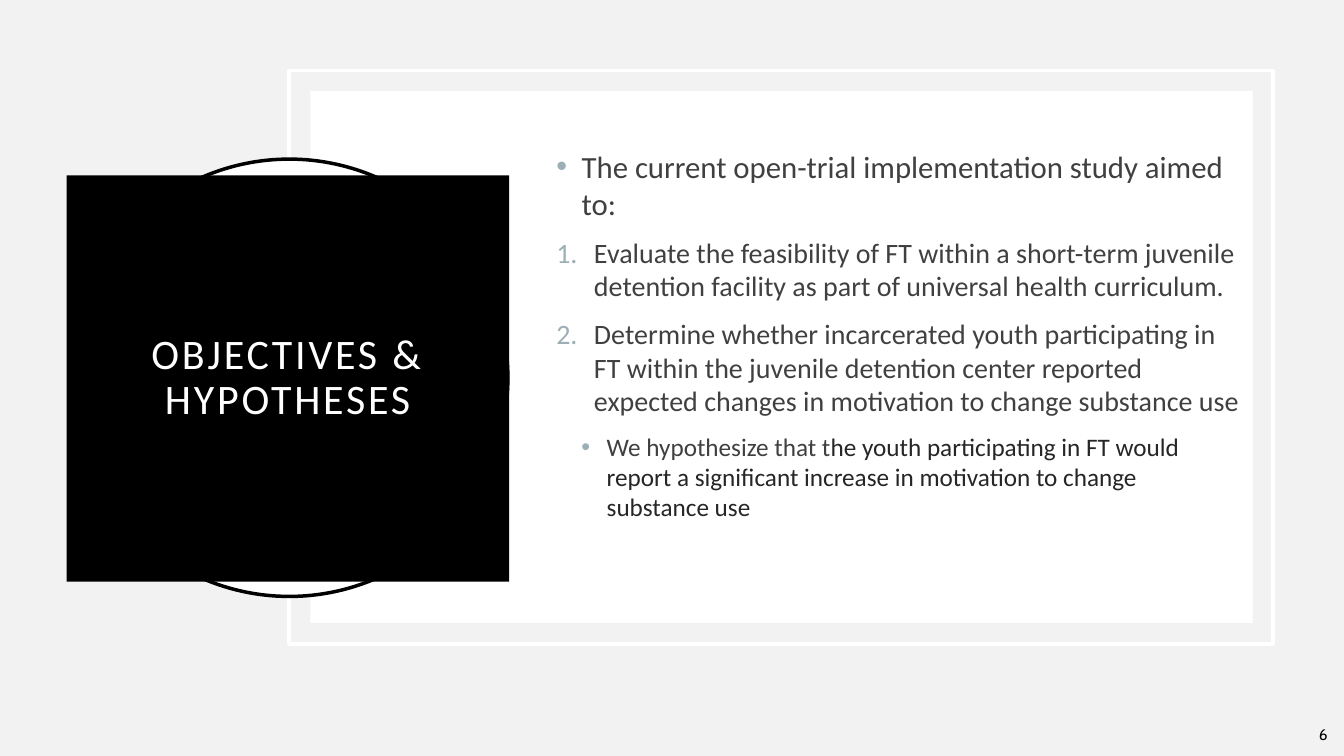
"""Build the objectives and hypotheses slide."""
from dataclasses import dataclass
from typing import Optional

import lxml.etree
import pptx
import pptx.dml.color
import pptx.enum.shapes
import pptx.enum.text
import pptx.oxml.ns
import pptx.shapes.autoshape
import pptx.slide
import pptx.text.text
import pptx.util

Cm = pptx.util.Cm
Pt = pptx.util.Pt
RGBColor = pptx.dml.color.RGBColor
MSO_SHAPE = pptx.enum.shapes.MSO_SHAPE
PP_ALIGN = pptx.enum.text.PP_ALIGN
MIDDLE = pptx.enum.text.MSO_ANCHOR.MIDDLE

BACKGROUND = RGBColor(0xF2, 0xF2, 0xF2)
WHITE = RGBColor(0xFF, 0xFF, 0xFF)
BLACK = RGBColor(0x00, 0x00, 0x00)
BODY_GREY = RGBColor(0x40, 0x40, 0x40)
DARK_GREY = RGBColor(0x26, 0x26, 0x26)
BULLET_GREY = RGBColor(0x9B, 0xAF, 0xB5)


@dataclass(frozen=True)
class Panel:
    kind: MSO_SHAPE
    left: float
    top: float
    width: float
    height: float
    fill: Optional[RGBColor] = None
    line: Optional[RGBColor] = None


@dataclass(frozen=True)
class TextRun:
    text: str
    size: float
    color: RGBColor
    font: str = "Calibri"
    spacing: float = 0


@dataclass(frozen=True)
class ListItem:
    runs: tuple[TextRun, ...]
    margin: float
    hanging: float
    numbered: bool = False
    level: int = 0


FRAME = Panel(MSO_SHAPE.RECTANGLE, 7.29, 1.78, 24.79, 14.45, line=WHITE)
CONTENT_PANEL = Panel(MSO_SHAPE.RECTANGLE, 7.82, 2.29, 23.75, 13.41, fill=WHITE)
CIRCLE = Panel(MSO_SHAPE.OVAL, 1.78, 4.01, 11.02, 11.02, fill=WHITE, line=BLACK)
TITLE_PANEL = Panel(MSO_SHAPE.RECTANGLE, 1.68, 4.42, 11.15, 10.24, fill=BLACK)
NUMBER_PANEL = Panel(MSO_SHAPE.OVAL, 32.84, 18.03, 1.02, 1.02)

TITLE = TextRun("OBJECTIVES & HYPOTHESES", 30, WHITE, spacing=2)
SLIDE_NUMBER = TextRun("6", 11, BLACK, font="Cabin")

OBJECTIVES = (
    ListItem((TextRun("The current open-trial implementation study aimed to:", 22, BODY_GREY),), 0.64, 0.64),
    ListItem((TextRun("Evaluate the feasibility of FT within a short-term juvenile detention facility "
                      "as part of universal health curriculum.", 20, BODY_GREY),), 0.95, 0.95, numbered=True),
    ListItem((TextRun("Determine whether incarcerated youth participating in FT within the juvenile "
                      "detention center reported expected changes in motivation to change substance use",
                      20, BODY_GREY),), 0.95, 0.95, numbered=True),
    ListItem((TextRun("We hypothesize that t", 18, BODY_GREY),
              TextRun("he youth participating in FT would report a significant increase in motivation "
                      "to change substance use", 18, DARK_GREY)), 1.27, 0.64, level=1),
)


def add_panel(slide: pptx.slide.Slide, panel: Panel) -> pptx.shapes.autoshape.Shape:
    shape = slide.shapes.add_shape(
        panel.kind, Cm(panel.left), Cm(panel.top), Cm(panel.width), Cm(panel.height))
    shape.shadow.inherit = False
    if panel.fill is None:
        shape.fill.background()
    else:
        shape.fill.solid()
        shape.fill.fore_color.rgb = panel.fill
    if panel.line is None:
        shape.line.fill.background()
    else:
        shape.line.color.rgb = panel.line
        shape.line.width = Pt(2.5)
    return shape


def add_run(paragraph: pptx.text.text._Paragraph, text_run: TextRun) -> None:
    run = paragraph.add_run()
    run.text = text_run.text
    run.font.name = text_run.font
    run.font.size = Pt(text_run.size)
    run.font.color.rgb = text_run.color
    if text_run.spacing:
        run.font._element.set("spc", str(round(text_run.spacing * 100)))


def add_label(slide: pptx.slide.Slide, panel: Panel, text_run: TextRun,
              side_inset: float, end_inset: float, space_after: float = 0) -> None:
    frame = add_panel(slide, panel).text_frame
    frame.word_wrap = True
    frame.vertical_anchor = MIDDLE
    frame.margin_left = frame.margin_right = Cm(side_inset)
    frame.margin_top = frame.margin_bottom = Cm(end_inset)
    paragraph = frame.paragraphs[0]
    paragraph.alignment = PP_ALIGN.CENTER
    paragraph.line_spacing = 0.9
    paragraph.space_after = Pt(space_after)
    add_run(paragraph, text_run)


def set_bullet(paragraph: pptx.text.text._Paragraph, item: ListItem) -> None:
    properties = paragraph._p.get_or_add_pPr()
    properties.set("marL", str(Cm(item.margin)))
    properties.set("indent", str(-Cm(item.hanging)))
    qn = pptx.oxml.ns.qn
    color = lxml.etree.SubElement(properties, qn("a:buClr"))
    lxml.etree.SubElement(color, qn("a:srgbClr"), val=str(BULLET_GREY))
    if item.numbered:
        lxml.etree.SubElement(properties, qn("a:buFont"), typeface="+mj-lt")
        lxml.etree.SubElement(properties, qn("a:buAutoNum"), type="arabicPeriod")
    else:
        lxml.etree.SubElement(properties, qn("a:buFont"), typeface="Arial")
        lxml.etree.SubElement(properties, qn("a:buChar"), char="•")


def add_objectives(slide: pptx.slide.Slide, items: tuple[ListItem, ...]) -> None:
    shape = slide.shapes.add_textbox(Cm(13.77), Cm(2.29), Cm(17.78), Cm(13.41))
    frame = shape.text_frame
    frame.word_wrap = True
    frame.vertical_anchor = MIDDLE
    frame.margin_bottom = Cm(1.25)
    for index, item in enumerate(items):
        paragraph = frame.add_paragraph() if index else frame.paragraphs[0]
        paragraph.level = item.level
        paragraph.space_before = Pt(10)
        set_bullet(paragraph, item)
        for text_run in item.runs:
            add_run(paragraph, text_run)


def main() -> None:
    presentation = pptx.Presentation()
    presentation.slide_width = Cm(33.87)
    presentation.slide_height = Cm(19.05)
    slide = presentation.slides.add_slide(presentation.slide_layouts[6])
    slide.background.fill.solid()
    slide.background.fill.fore_color.rgb = BACKGROUND
    for panel in (FRAME, CONTENT_PANEL, CIRCLE):
        add_panel(slide, panel)
    add_label(slide, TITLE_PANEL, TITLE, 0.51, 0.51)
    add_objectives(slide, OBJECTIVES)
    add_label(slide, NUMBER_PANEL, SLIDE_NUMBER, 0.05, 0.13, space_after=6)
    presentation.save("out.pptx")


if __name__ == "__main__":
    main()
